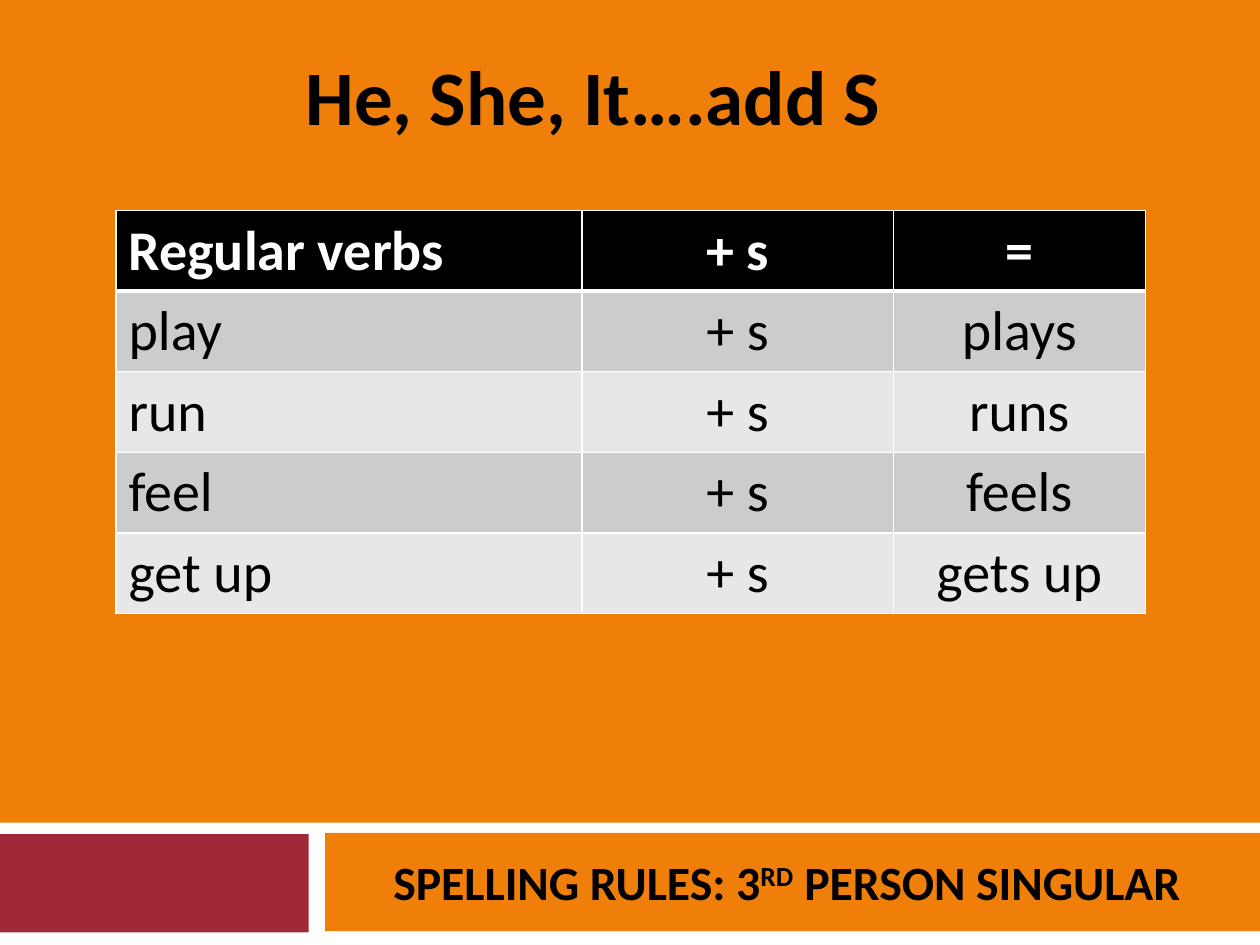
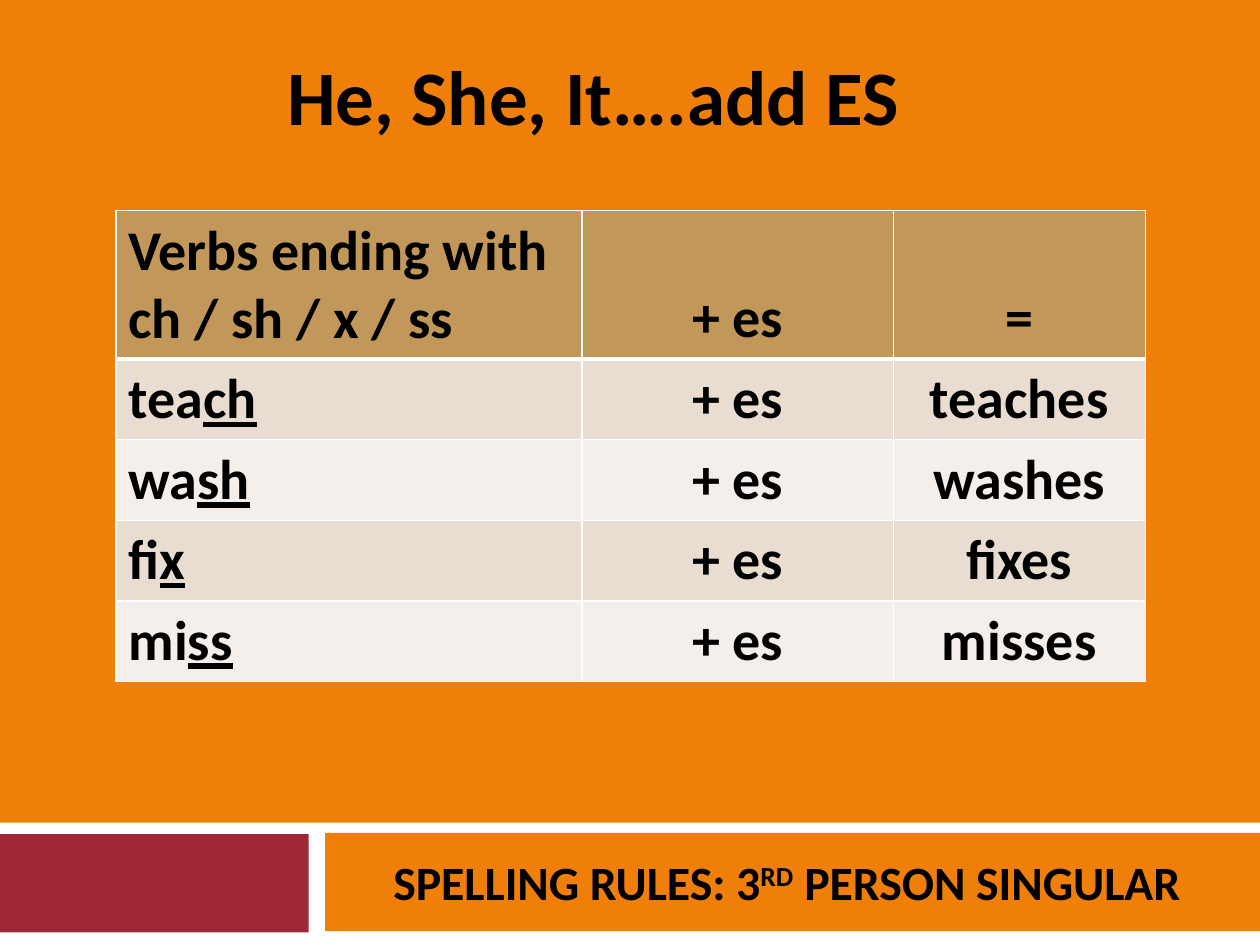
from lxml import etree
from pptx import Presentation
from pptx.dml.color import RGBColor
from pptx.enum.shapes import MSO_SHAPE
from pptx.enum.text import MSO_ANCHOR, PP_ALIGN
from pptx.oxml.ns import qn
from pptx.util import Inches, Pt

ORANGE, RED, WHITE, BLACK = "F07F09", "9F2936", "FFFFFF", "000000"
GREYS = ("CCCCCC", "E7E7E7")
TANS = ("E9DDD1", "F4EFEA")


def rgb(value):
    """Turn a hex string into a colour."""
    return RGBColor.from_string(value)


class Deck:
    """Holds the shared style and the current slide."""

    font = "Calibri"
    columns = (3.7, 2.47, 2)
    row_height = 0.64

    def __init__(self):
        """Start a 10 by 7.5 inch presentation."""
        self.prs = Presentation()
        self.prs.slide_width, self.prs.slide_height = Inches(10), Inches(7.5)

    def slide(self, title):
        """Add a slide with its background, bands, footer and title."""
        self.s = self.prs.slides.add_slide(self.prs.slide_layouts[6])
        self.s.background.fill.solid()
        self.s.background.fill.fore_color.rgb = rgb(ORANGE)
        self.band(0, 6.53, 10, 0.97, WHITE)
        self.band(-0.01, 6.62, 2.46, 0.78, RED)
        self.band(2.58, 6.61, 7.42, 0.78, ORANGE)
        self.footer()
        self.text(1.42, 0.33, 6.58, 0.84, (title,), 44)

    def band(self, x, y, w, h, color):
        """Add a plain rectangle."""
        sp = self.s.shapes.add_shape(MSO_SHAPE.RECTANGLE, Inches(x), Inches(y), Inches(w), Inches(h))
        sp.shadow.inherit = False
        sp.fill.solid()
        sp.fill.fore_color.rgb = rgb(color)
        sp.line.fill.background()

    def style(self, p, size, color=BLACK, bold=True, align=PP_ALIGN.CENTER):
        """Format a paragraph and all its runs."""
        p.alignment = align
        for r in p.runs:
            r.font.name, r.font.size, r.font.bold = self.font, Pt(size), bold
            r.font.color.rgb = rgb(color)

    def text(self, x, y, w, h, parts, size):
        """Add a centred bold text box and return its paragraph."""
        tf = self.s.shapes.add_textbox(Inches(x), Inches(y), Inches(w), Inches(h)).text_frame
        tf.word_wrap = True
        tf.vertical_anchor = MSO_ANCHOR.MIDDLE
        p = tf.paragraphs[0]
        for part in parts:
            p.add_run().text = part
        self.style(p, size)
        return p

    def footer(self):
        """Add the lesson name with its raised ordinal."""
        parts = ("SPELLING RULES: 3", "RD", " PERSON SINGULAR")
        p = self.text(2.58, 6.62, 7.33, 0.75, parts, 27.3)
        p.space_before = Pt(7)
        p.runs[1]._r.get_or_add_rPr().set("baseline", "30000")

    def borders(self, cell, top, bottom):
        """Draw white borders around a cell."""
        tcPr = cell._tc.get_or_add_tcPr()
        for side, width in zip("LRTB", (1, 1, top, bottom)):
            ln = etree.SubElement(tcPr, qn(f"a:ln{side}"), w=str(Pt(width)))
            fill = etree.SubElement(ln, qn("a:solidFill"))
            etree.SubElement(fill, qn("a:srgbClr"), val=WHITE)

    def table(self, rows, head_fill, head_color, fills, bold, head_height=row_height):
        """Add a verb table; an underscore starts an underlined ending."""
        heights = [head_height] + [self.row_height] * (len(rows) - 1)
        frame = self.s.shapes.add_table(
            len(rows), len(self.columns), Inches(0.92), Inches(1.67),
            Inches(sum(self.columns)), Inches(sum(heights)))
        table = frame.table
        table.first_row = table.horz_banding = False
        for column, width in zip(table.columns, self.columns):
            column.width = Inches(width)
        for i, (row, height) in enumerate(zip(rows, heights)):
            table.rows[i].height = Inches(height)
            for j, value in enumerate(row):
                cell = table.cell(i, j)
                self.borders(cell, 3 if i == 1 else 1, 1 if i else 3)
                cell.fill.solid()
                cell.fill.fore_color.rgb = rgb(fills[(i - 1) % 2] if i else head_fill)
                if i == 0:
                    cell.vertical_anchor = MSO_ANCHOR.BOTTOM
                stem, _, ending = value.partition("_")
                tf = cell.text_frame
                tf.text = stem
                if ending:
                    r = tf.paragraphs[0].add_run()
                    r.text = ending
                    r.font.underline = True
                for p in tf.paragraphs:
                    self.style(p, 32, BLACK if i else head_color, bold or i == 0,
                               PP_ALIGN.CENTER if j else PP_ALIGN.LEFT)


def main():
    """Build both spelling slides."""
    deck = Deck()
    deck.slide("He, She, It….add S")
    verbs = ("play", "run", "feel")
    rows = [("Regular verbs", "+ s", "=")]
    rows += [(verb, "+ s", verb + "s") for verb in verbs]
    rows.append(("get up", "+ s", "gets up"))
    deck.table(rows, BLACK, WHITE, GREYS, False)

    deck.slide("He, She, It….add ES")
    verbs = ("tea_ch", "wa_sh", "fi_x", "mi_ss")
    rows = [("Verbs ending with\nch / sh / x / ss", "+ es", "=")]
    rows += [(verb, "+ es", verb.replace("_", "") + "es") for verb in verbs]
    deck.table(rows, "C19859", BLACK, TANS, True, 1.18)
    deck.prs.save("out.pptx")


if __name__ == "__main__":
    main()
